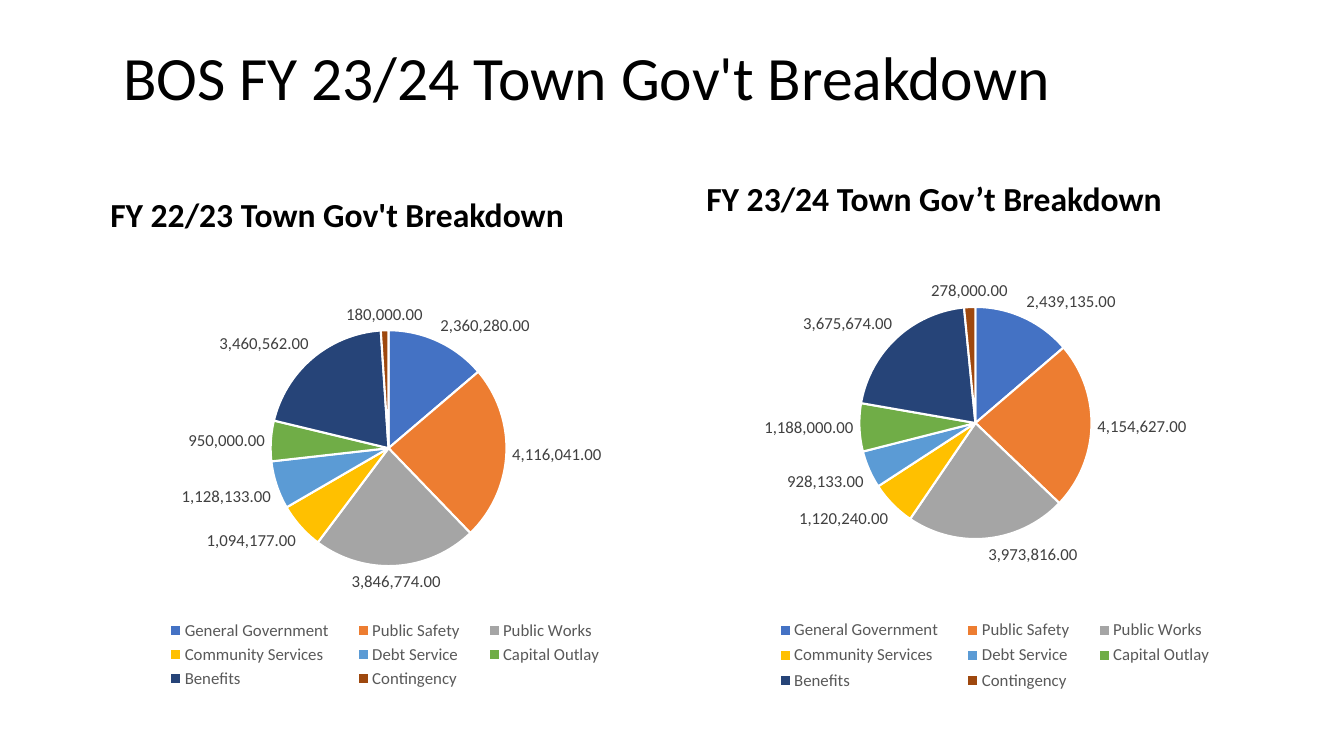
from lxml import etree
from pptx import Presentation
from pptx.chart.data import CategoryChartData
from pptx.dml.color import RGBColor
from pptx.enum.chart import XL_CHART_TYPE, XL_LABEL_POSITION, XL_LEGEND_POSITION
from pptx.enum.text import MSO_ANCHOR, MSO_AUTO_SIZE, PP_ALIGN
from pptx.oxml.ns import qn
from pptx.util import Cm, Pt

PIE = XL_CHART_TYPE.PIE
OUTSIDE = XL_LABEL_POSITION.OUTSIDE_END
BELOW = XL_LEGEND_POSITION.BOTTOM
TOP, BOTTOM = MSO_ANCHOR.TOP, MSO_ANCHOR.BOTTOM
LEFT = PP_ALIGN.LEFT
NO_FIT = MSO_AUTO_SIZE.NONE

BLACK = RGBColor(0x00, 0x00, 0x00)
WHITE = RGBColor(0xFF, 0xFF, 0xFF)
LABEL_GREY = RGBColor(0x40, 0x40, 0x40)
LEGEND_GREY = RGBColor(0x59, 0x59, 0x59)
FONT = "Calibri"

TITLE = "BOS FY 23/24 Town Gov't Breakdown"
DEPARTMENTS = [
    ("General Government", RGBColor(0x44, 0x72, 0xC4)),
    ("Public Safety", RGBColor(0xED, 0x7D, 0x31)),
    ("Public Works", RGBColor(0xA5, 0xA5, 0xA5)),
    ("Community Services", RGBColor(0xFF, 0xC0, 0x00)),
    ("Debt Service", RGBColor(0x5B, 0x9B, 0xD5)),
    ("Capital Outlay", RGBColor(0x70, 0xAD, 0x47)),
    ("Benefits", RGBColor(0x26, 0x44, 0x78)),
    ("Contingency", RGBColor(0x9E, 0x48, 0x0E)),
]
BUDGETS = [
    {
        "heading": "FY 22/23 Town Gov't Breakdown",
        "heading_area": (2.34, 4.67, 14.33, 2.29),
        "insets": (0.44, 1.04),
        "chart_area": (0.66, 6.38, 17.91, 11.43),
        "plot": (0.04, 0.17, 0.94, 0.52),
        "legend": (0.17, 0.8, 0.67, 0.17),
        "amounts": (2360280, 4116041, 3846774, 1094177,
                    1128133, 950000, 3460562, 180000),
    },
    {
        "heading": "FY 23/24 Town Gov’t Breakdown",
        "heading_area": (17.55, 3.35, 15.04, 2.29),
        "insets": (0.25, 0.13),
        "chart_area": (16.94, 6.99, 16.26, 10.64),
        "plot": (0.1, 0.07, 0.74, 0.55),
        "legend": (0.13, 0.8, 0.74, 0.19),
        "amounts": (2439135, 4154627, 3973816, 1120240,
                    928133, 1188000, 3675674, 278000),
    },
]


def lengths(area):
    return [Cm(value) for value in area]


def style_font(font, size, color, bold=False):
    font.name, font.size, font.bold = FONT, Pt(size), bold
    font.color.rgb = color


def write_text(box, text, size, anchor, insets, bold=False):
    frame = box.text_frame
    frame.word_wrap = True
    frame.auto_size = NO_FIT
    frame.vertical_anchor = anchor
    frame.margin_left, frame.margin_bottom = lengths(insets)
    frame.text = text
    para = frame.paragraphs[0]
    para.alignment = LEFT
    para.line_spacing = 0.9
    style_font(para.font, size, BLACK, bold)


def set_layout(parent, position, area, inner=False):
    for old in parent.findall(qn("c:layout")):
        parent.remove(old)
    layout = etree.Element(qn("c:layout"))
    manual = etree.SubElement(layout, qn("c:manualLayout"))
    settings = [("layoutTarget", "inner")] if inner else []
    settings += [("xMode", "edge"), ("yMode", "edge")]
    settings += zip("xywh", area)
    for tag, value in settings:
        etree.SubElement(manual, qn("c:" + tag)).set("val", str(value))
    parent.insert(position, layout)


def add_pie(page, budget):
    data = CategoryChartData(number_format="#,##0.00")
    data.categories = [name for name, color in DEPARTMENTS]
    data.add_series("Series 1", budget["amounts"])
    chart = page.shapes.add_chart(PIE, *lengths(budget["chart_area"]), data).chart
    style_font(chart.font, 10, BLACK)
    chart.has_title = False
    chart.has_legend = True
    chart.legend.position = BELOW
    chart.legend.include_in_layout = False
    style_font(chart.legend.font, 12, LEGEND_GREY)

    plot = chart.plots[0]
    plot.vary_by_categories = True
    for index, (name, color) in enumerate(DEPARTMENTS):
        pie_slice = plot.series[0].points[index].format
        pie_slice.fill.solid()
        pie_slice.fill.fore_color.rgb = color
        pie_slice.line.color.rgb = WHITE
        pie_slice.line.width = Pt(1.5)
    labels = plot.series[0].data_labels
    labels.show_value = True
    labels.show_percentage = False
    labels.number_format = "#,##0.00"
    labels.number_format_is_linked = False
    labels.position = OUTSIDE
    style_font(labels.font, 12, LABEL_GREY)

    set_layout(chart.element.find(".//" + qn("c:plotArea")), 0, budget["plot"], True)
    set_layout(chart.element.find(".//" + qn("c:legend")), 1, budget["legend"])


def main():
    deck = Presentation()
    deck.slide_width, deck.slide_height = Cm(33.87), Cm(19.05)
    page = deck.slides.add_slide(deck.slide_layouts[5])
    title = page.shapes.title
    title.left, title.top, title.width, title.height = lengths((2.49, 1.07, 29.21, 3.68))
    write_text(title, TITLE, 44, TOP, (0.61, 0.13))
    for budget in BUDGETS:
        heading = page.shapes.add_textbox(*lengths(budget["heading_area"]))
        write_text(heading, budget["heading"], 24, BOTTOM, budget["insets"], True)
        add_pie(page, budget)
    deck.save("out.pptx")


if __name__ == "__main__":
    main()
